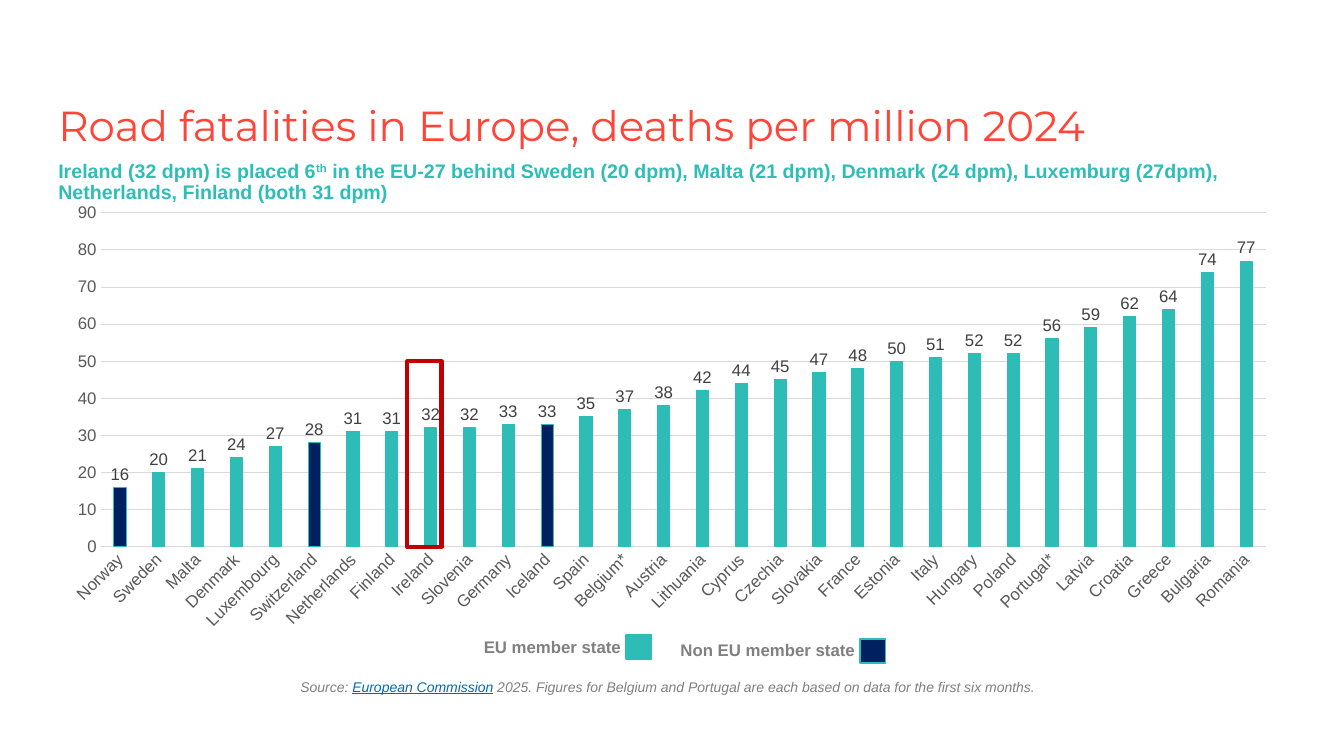
from dataclasses import dataclass

from lxml import etree
from pptx import Presentation
from pptx import util as u
from pptx.chart.data import CategoryChartData
from pptx.dml.color import RGBColor
from pptx.enum import chart as ch, shapes, text
from pptx.oxml.ns import qn


@dataclass(frozen=True)
class Theme:
    teal: str = "2EBDB6"
    subtitle: str = "2EBDB7"
    navy: str = "002060"
    coral: str = "FF4438"
    red: str = "C00000"
    link: str = "006AB8"
    grey: str = "808080"
    axis: str = "595959"
    value: str = "404040"
    grid: str = "D9D9D9"
    heading: str = "Montserrat"
    body: str = "Arial"
    title_pt: int = 30
    lead_pt: int = 14
    label_pt: int = 12
    note_pt: int = 10


T = Theme()
SLIDE = (13.33, 7.5)

TITLE = "Road fatalities in Europe, deaths per million 2024"
LEAD = [
    ("Ireland (32 dpm) is placed 6", {}),
    ("th", {"raised": True}),
    (" in the EU-27 behind Sweden (20 dpm), Malta (21 dpm), Denmark (24 dpm), "
     "Luxemburg (27dpm), Netherlands, Finland (both 31 dpm)", {}),
]
SOURCE = [
    ("Source: ", {}),
    ("European Commission", {"color": T.link, "underline": True}),
    (" 2025. Figures for Belgium and Portugal are each based on data for "
     "the first six months.", {}),
]
DEATHS = {
    "Norway": 16, "Sweden": 20, "Malta": 21, "Denmark": 24, "Luxembourg": 27,
    "Switzerland": 28, "Netherlands": 31, "Finland": 31, "Ireland": 32,
    "Slovenia": 32, "Germany": 33, "Iceland": 33, "Spain": 35, "Belgium*": 37,
    "Austria": 38, "Lithuania": 42, "Cyprus": 44, "Czechia": 45, "Slovakia": 47,
    "France": 48, "Estonia": 50, "Italy": 51, "Hungary": 52, "Poland": 52,
    "Portugal*": 56, "Latvia": 59, "Croatia": 62, "Greece": 64, "Bulgaria": 74,
    "Romania": 77,
}
NON_EU = ("Norway", "Switzerland", "Iceland")
HIGHLIGHT, HIGHLIGHT_TOP = "Ireland", 50
AXIS_MAX, AXIS_STEP = 90, 10

# Percent of slide width and height: left, top, width, height.
TITLE_AT = (3.6, 5.87, 78.32, 14.67)
LEAD_AT = (3.6, 20.67, 92.72, 8.4)
CHART_AT = (3.6, 25.87, 92.42, 58.67)
SOURCE_AT = (21.61, 89.07, 56.79, 3.6)
LEGEND = [
    ("EU member state", T.teal, (35.26, 83.6, 12.6, 4), (46.59, 84, 1.88, 3.2)),
    ("Non EU member state", T.navy, (49.89, 84, 14.63, 4), (63.99, 84.53, 1.88, 3.2)),
]
PLOT = (4.2, 3.9, 93.8, 75.3)


def rgb(color):
    return RGBColor.from_string(color)


def place(at):
    return [u.Inches(share / 100 * SLIDE[i % 2]) for i, share in enumerate(at)]


def style(font, size, color, name=T.body, bold=False, italic=False):
    font.size, font.name = u.Pt(size), name
    font.bold, font.italic = bold, italic
    font.color.rgb = rgb(color)


def outline(line, color, width):
    line.color.rgb = rgb(color)
    line.width = u.Pt(width)


def add_text(s, at, runs, size, color, spacing=1.0, anchor=text.MSO_ANCHOR.TOP, **look):
    tf = s.shapes.add_textbox(*place(at)).text_frame
    tf.word_wrap = True
    tf.vertical_anchor = anchor
    p = tf.paragraphs[0]
    p.line_spacing = spacing
    for words, extra in runs:
        r = p.add_run()
        r.text = words
        style(r.font, size, extra.get("color", color), **look)
        if extra.get("underline"):
            r.font.underline = True
        if extra.get("raised"):
            r.font._element.set("baseline", "30000")


def add_box(s, at, color, width, fill=None):
    sp = s.shapes.add_shape(shapes.MSO_SHAPE.RECTANGLE, *place(at))
    sp.shadow.inherit = False
    if fill:
        sp.fill.solid()
        sp.fill.fore_color.rgb = rgb(fill)
    else:
        sp.fill.background()
    outline(sp.line, color, width)


def set_plot_area(chart):
    area = chart._chartSpace.find(".//" + qn("c:plotArea"))
    for old in area.findall(qn("c:layout")):
        area.remove(old)
    layout = etree.Element(qn("c:layout"))
    manual = etree.SubElement(layout, qn("c:manualLayout"))
    settings = [("layoutTarget", "inner"), ("xMode", "edge"), ("yMode", "edge")]
    settings += [(key, str(share / 100)) for key, share in zip("xywh", PLOT)]
    for tag, val in settings:
        etree.SubElement(manual, qn("c:" + tag)).set("val", val)
    area.insert(0, layout)


def add_deaths_chart(s):
    data = CategoryChartData()
    data.categories = list(DEATHS)
    data.add_series("Series 1", list(DEATHS.values()))
    chart = s.shapes.add_chart(
        ch.XL_CHART_TYPE.COLUMN_CLUSTERED, *place(CHART_AT), data).chart
    chart.has_legend = chart.has_title = False
    chart.font.size, chart.font.name = u.Pt(T.note_pt), T.body
    set_plot_area(chart)

    cat, val = chart.category_axis, chart.value_axis
    for axis in (cat, val):
        axis.major_tick_mark = axis.minor_tick_mark = ch.XL_TICK_MARK.NONE
        style(axis.tick_labels.font, T.label_pt, T.axis)
    outline(cat.format.line, T.grid, 0.75)
    cat._element.find(".//" + qn("a:bodyPr")).set("rot", "-2700000")
    val.minimum_scale, val.maximum_scale, val.major_unit = 0, AXIS_MAX, AXIS_STEP
    val.format.line.fill.background()
    outline(val.major_gridlines.format.line, T.grid, 0.75)

    plot = chart.plots[0]
    plot.gap_width, plot.overlap = 219, -27
    plot.vary_by_categories = False
    series = plot.series[0]
    countries = list(DEATHS)
    bars = [(series.format, T.teal)]
    bars += [(series.points[countries.index(c)].format, T.navy) for c in NON_EU]
    for fmt, color in bars:
        fmt.fill.solid()
        fmt.fill.fore_color.rgb = rgb(color)
        outline(fmt.line, T.teal, 0.75)
    labels = series.data_labels
    labels.show_value = True
    labels.position = ch.XL_LABEL_POSITION.OUTSIDE_END
    style(labels.font, T.label_pt, T.value)


def highlight_at():
    left, top, width, height = CHART_AT
    x, y, w, h = (share / 100 for share in PLOT)
    column = width * w / len(DEATHS)
    tall = height * h * HIGHLIGHT_TOP / AXIS_MAX
    first = list(DEATHS).index(HIGHLIGHT) - 0.1
    return (left + width * x + column * first,
            top + height * (y + h) - tall, column * 0.88, tall)


def main():
    prs = Presentation()
    prs.slide_width, prs.slide_height = map(u.Inches, SLIDE)
    s = prs.slides.add_slide(prs.slide_layouts[6])
    add_text(s, TITLE_AT, [(TITLE, {})], T.title_pt, T.coral, spacing=0.9,
             anchor=text.MSO_ANCHOR.BOTTOM, name=T.heading)
    add_text(s, LEAD_AT, LEAD, T.lead_pt, T.subtitle, spacing=0.9, bold=True)
    add_deaths_chart(s)
    add_text(s, SOURCE_AT, SOURCE, T.note_pt, T.grey, italic=True)
    for label, color, label_at, swatch_at in LEGEND:
        add_text(s, label_at, [(label, {})], T.label_pt, T.grey, bold=True)
        add_box(s, swatch_at, T.teal, 1, fill=color)
    add_box(s, highlight_at(), T.red, 3)
    prs.save("out.pptx")


if __name__ == "__main__":
    main()
